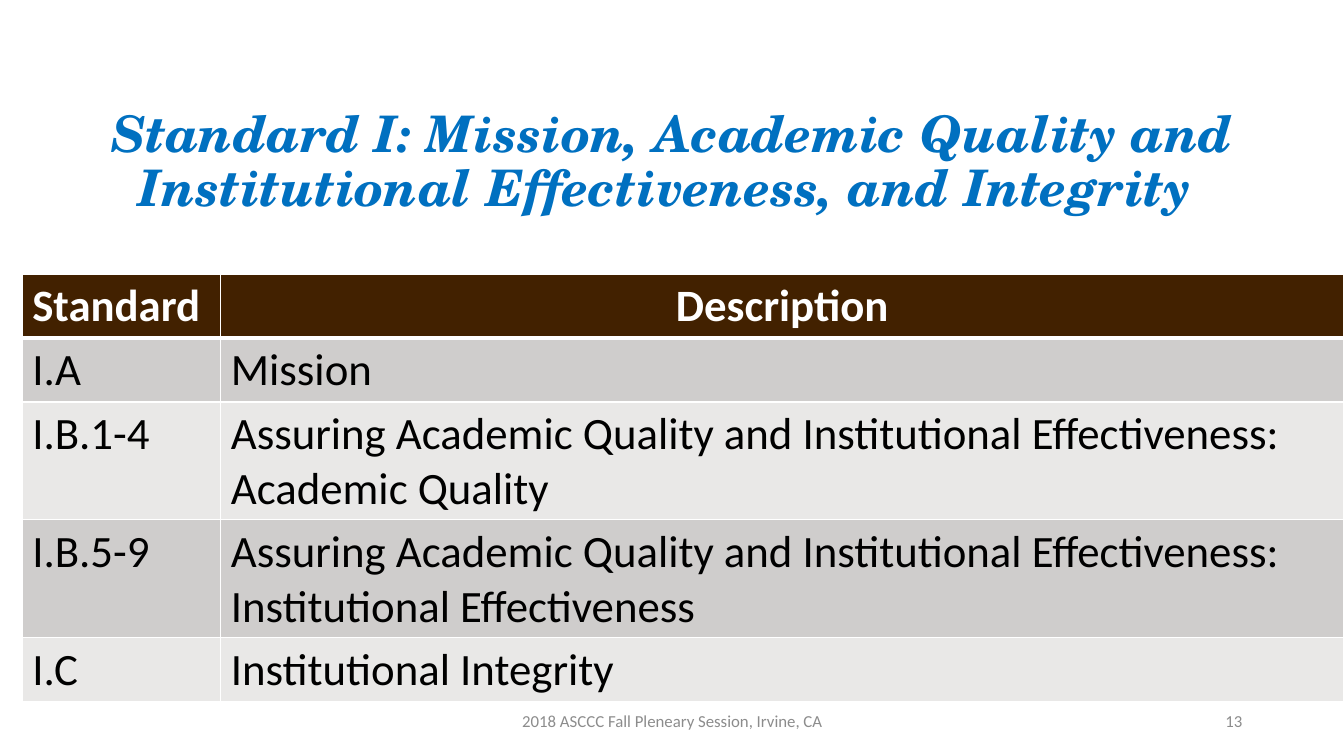
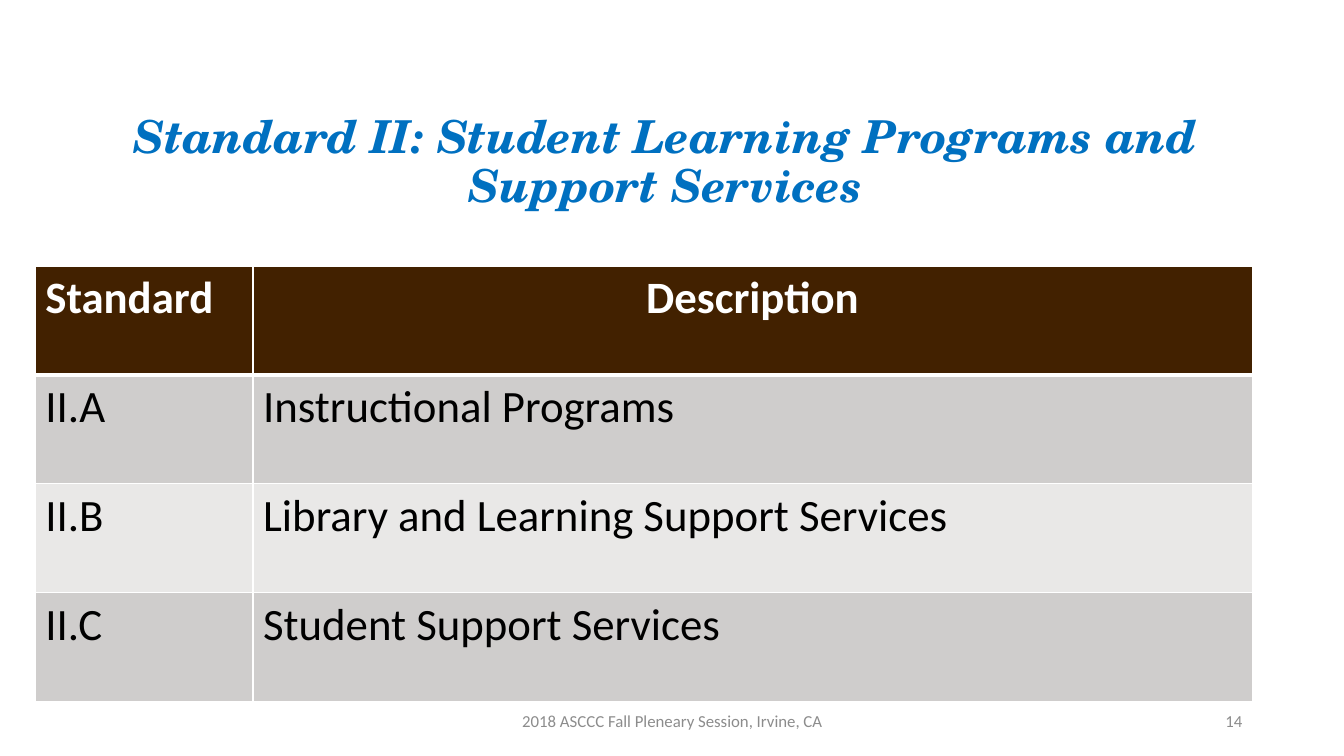
from dataclasses import dataclass

from lxml import etree
from pptx import Presentation
from pptx import util as u
from pptx.dml.color import RGBColor
from pptx.enum import text
from pptx.oxml.ns import qn


@dataclass(frozen=True)
class Theme:
    title_font: str = "TeX Gyre Schola"
    body_font: str = "Calibri"
    blue: str = "0070C0"
    brown: str = "422100"
    white: str = "FFFFFF"
    black: str = "000000"
    footer_grey: str = "8C8C8C"
    bands: tuple = ("CFCDCC", "E9E8E7")
    table_size: float = 32
    footer_size: float = 12
    rule: float = 1
    header_rule: float = 3


T = Theme()
LEFT, CENTER, RIGHT = text.PP_ALIGN.LEFT, text.PP_ALIGN.CENTER, text.PP_ALIGN.RIGHT
FOOTER = "2018 ASCCC Fall Pleneary Session, Irvine, CA"
HEADER = ("Standard", "Description")

SLIDES = [
    dict(
        number=13,
        title="Standard I: Mission, Academic Quality and "
              "Institutional Effectiveness, and Integrity ",
        title_box=(0, 0.98, 13.33, 1.45), title_size=36, title_inset=0.22,
        origin=(0.22, 2.72), cols=(1.97, 11.14),
        heights=(0.62, 0.62, 1.11, 1.11, 0.62),
        rows=[
            ("I.A", "Mission"),
            ("I.B.1-4", "Assuring Academic Quality and Institutional "
                        "Effectiveness: Academic Quality"),
            ("I.B.5-9", "Assuring Academic Quality and Institutional "
                        "Effectiveness: Institutional Effectiveness"),
            ("I.C", "Institutional Integrity"),
        ],
    ),
    dict(
        number=14,
        title="Standard II: Student Learning Programs and \vSupport Services ",
        title_box=(0, 0.99, 13.33, 1.25), title_size=32.4, title_inset=0.05,
        origin=(0.35, 2.64), cols=(2.16, 9.91), heights=(1.08,) * 4,
        rows=[
            ("II.A", "Instructional Programs"),
            ("II.B", "Library and Learning Support Services"),
            ("II.C", "Student Support Services"),
        ],
    ),
]


def write(tf, words, color, align=LEFT, **font):
    """Put one formatted paragraph in a text frame."""
    p = tf.paragraphs[0]
    p.text = words
    p.alignment = align
    for r in p.runs:
        r.font.color.rgb = RGBColor.from_string(color)
        for name, value in font.items():
            setattr(r.font, name, value)
    return p


def add_text(s, box, words, color, align, **font):
    sp = s.shapes.add_textbox(*map(u.Inches, box))
    tf = sp.text_frame
    tf.word_wrap = True
    tf.vertical_anchor = text.MSO_ANCHOR.MIDDLE
    write(tf, words, color, align, **font)
    return tf


def add_title(s, words, box, size, inset):
    tf = add_text(s, box, words, T.blue, CENTER, name=T.title_font,
                  size=u.Pt(size), bold=True, italic=True)
    tf.margin_bottom = u.Inches(inset)
    tf.paragraphs[0].line_spacing = 0.9


def add_footer(s, number):
    font = dict(name=T.body_font, size=u.Pt(T.footer_size))
    add_text(s, (4.42, 6.95, 4.5, 0.4), FOOTER, T.footer_grey, CENTER, **font)
    add_text(s, (9.42, 6.95, 3, 0.4), str(number), T.footer_grey, RIGHT, **font)


def set_borders(cell, top, bottom):
    widths = dict(lnL=T.rule, lnR=T.rule, lnT=top, lnB=bottom)
    tc_pr = cell._tc.get_or_add_tcPr()
    for side, width in widths.items():
        ln = etree.SubElement(tc_pr, qn(f"a:{side}"), w=str(u.Pt(width)))
        fill = etree.SubElement(ln, qn("a:solidFill"))
        etree.SubElement(fill, qn("a:srgbClr"), val=T.white)


def add_standards(s, origin, cols, heights, rows):
    size = (sum(cols), sum(heights))
    table = s.shapes.add_table(len(heights), len(cols),
                               *map(u.Inches, origin + size)).table
    for column, width in zip(table.columns, cols):
        column.width = u.Inches(width)
    for row, height in zip(table.rows, heights):
        row.height = u.Inches(height)

    for i, words in enumerate([HEADER, *rows]):
        head = i == 0
        fill = T.brown if head else T.bands[(i - 1) % 2]
        for j, word in enumerate(words):
            cell = table.cell(i, j)
            # The heavy rule lies between the header and the first body row
            set_borders(cell, T.header_rule if i == 1 else T.rule,
                        T.header_rule if head else T.rule)
            cell.fill.solid()
            cell.fill.fore_color.rgb = RGBColor.from_string(fill)
            write(cell.text_frame, word, T.white if head else T.black,
                  CENTER if head and j else LEFT, name=T.body_font,
                  size=u.Pt(T.table_size), bold=head)


def main():
    prs = Presentation()
    prs.slide_width, prs.slide_height = u.Inches(13.33), u.Inches(7.5)
    for d in SLIDES:
        s = prs.slides.add_slide(prs.slide_layouts[6])
        add_title(s, d["title"], d["title_box"], d["title_size"], d["title_inset"])
        add_standards(s, d["origin"], d["cols"], d["heights"], d["rows"])
        add_footer(s, d["number"])
    prs.save("out.pptx")


if __name__ == "__main__":
    main()
